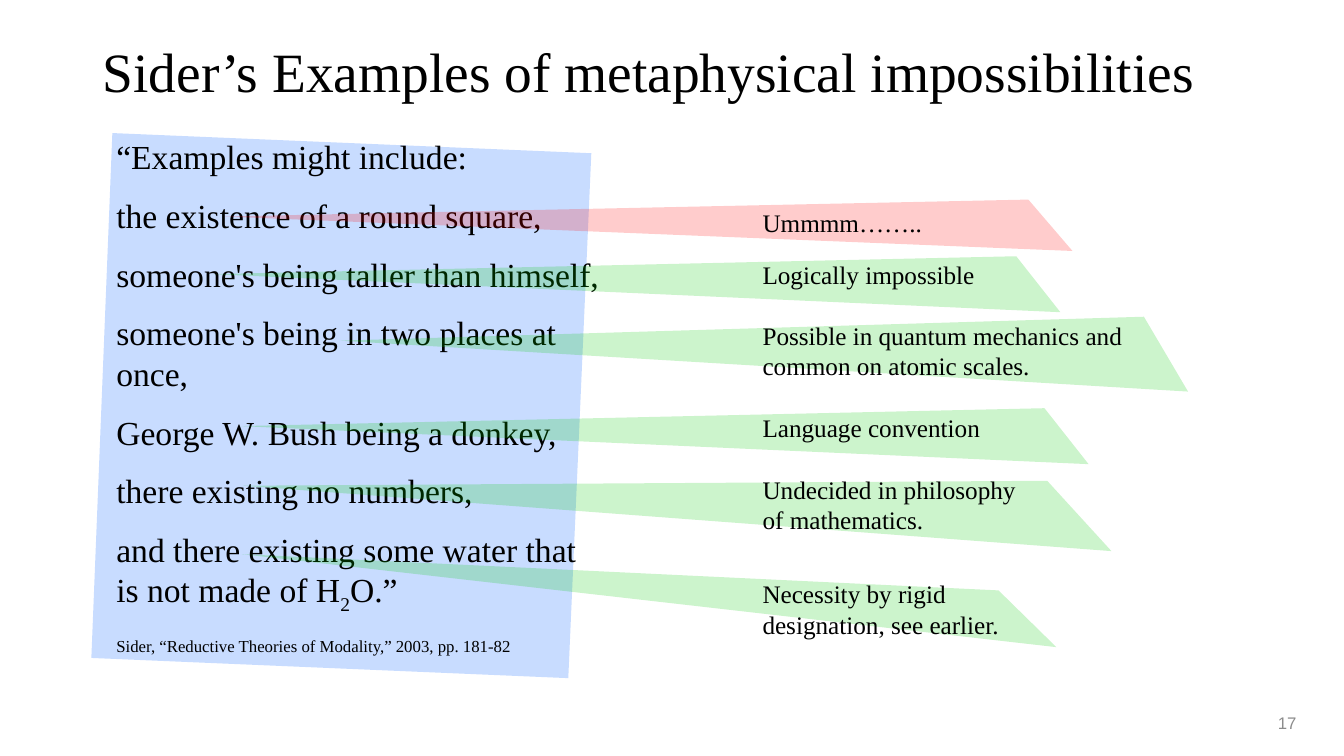
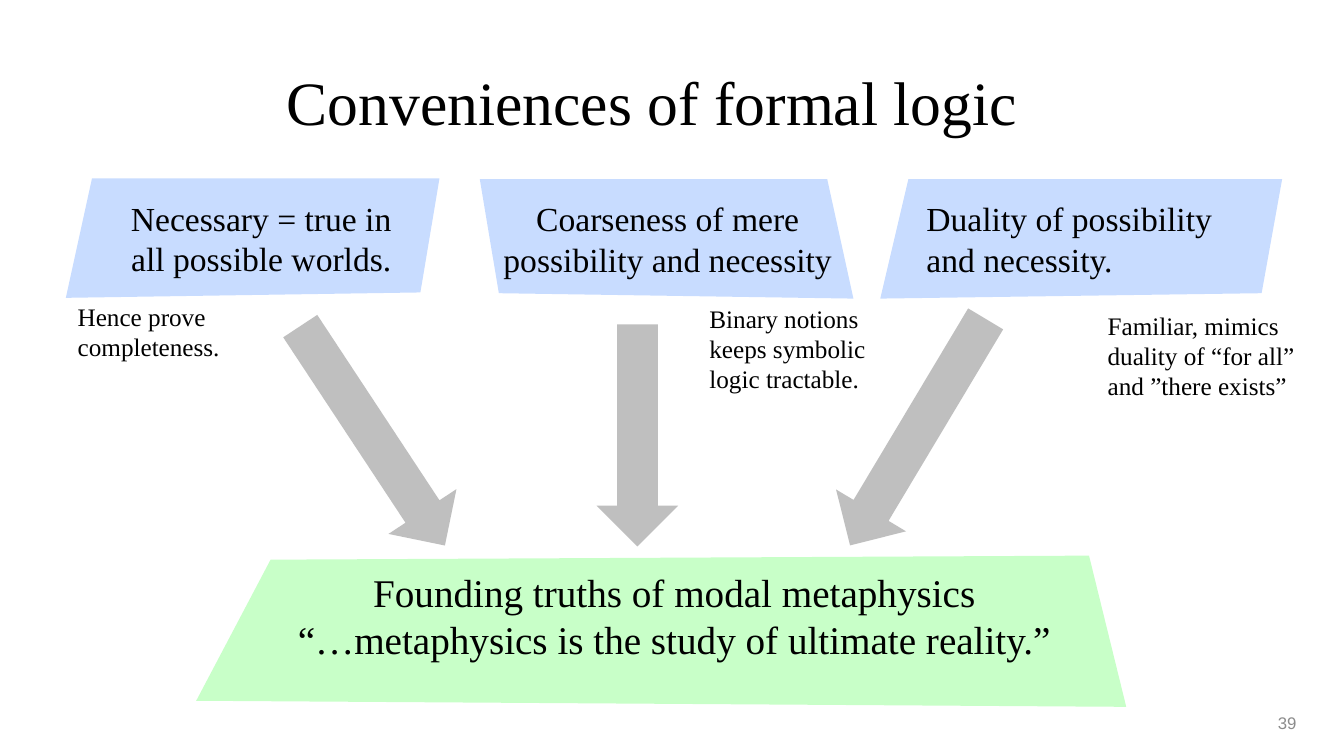
from dataclasses import dataclass

from lxml.etree import SubElement
from pptx import Presentation
from pptx.dml.color import RGBColor
from pptx.enum.shapes import MSO_SHAPE as Preset
from pptx.enum.text import MSO_ANCHOR as Anchor, PP_ALIGN as Align
from pptx.oxml.ns import qn
from pptx.util import Inches, Pt


@dataclass(frozen=True)
class Theme:
    serif: str = "Times New Roman"
    sans: str = "Arial"
    ink: str = "000000"
    muted: str = "8C8C8C"
    panel: str = "C8DCFF"
    base: str = "C8FFC8"
    arrow: str = "BFBFBF"
    objection: str = "00C800"
    doubt: str = "FF0000"
    wedge_opacity: int = 20
    heading: float = 44
    long_heading: float = 39.6
    conclusion: float = 28
    body: float = 24
    note: float = 18
    small: float = 12


THEME = Theme()


@dataclass(frozen=True)
class Box:
    left: float
    top: float
    width: float
    height: float

    def point(self, x, y):
        """Position at a percentage of this box."""
        return (round(self.left + self.width * x / 100),
                round(self.top + self.height * y / 100))

    def inner(self, x, y, width, height):
        """Inner box, all lengths in percent of this box."""
        return Box(*self.point(x, y), round(self.width * width / 100),
                   round(self.height * height / 100))

    def frame(self):
        return self.left, self.top, self.width, self.height


PAGE = Box(0, 0, Inches(40 / 3), Inches(7.5))


# Shared drawing helpers

def paint(shape, color, opacity=None):
    shape.shadow.inherit = False
    shape.fill.solid()
    shape.fill.fore_color.rgb = RGBColor.from_string(color)
    shape.line.fill.background()
    if opacity is not None:
        solid = shape._element.spPr.find(qn("a:solidFill"))
        SubElement(solid[0], qn("a:alpha")).set("val", str(opacity * 1000))


def add_outline(slide, box, corners, color, opacity=None):
    start, *rest = [box.point(x, y) for x, y in corners]
    builder = slide.shapes.build_freeform(*start)
    builder.add_line_segments(rest, close=True)
    paint(builder.convert_to_shape(), color, opacity)


def style_run(run, size, color=THEME.ink, font=THEME.serif):
    run.font.name = font
    run.font.size = Pt(size)
    run.font.color.rgb = RGBColor.from_string(color)


def add_text(slide, box, text, size, align=Align.LEFT, anchor=Anchor.TOP,
             color=THEME.ink, font=THEME.serif):
    frame = slide.shapes.add_textbox(*box.frame()).text_frame
    frame.word_wrap = True
    frame.vertical_anchor = anchor
    frame.text = text
    for paragraph in frame.paragraphs:
        paragraph.alignment = align
        for run in paragraph.runs:
            style_run(run, size, color, font)
    return frame


def add_page(deck, title, title_box, title_size, number):
    slide = deck.slides.add_slide(deck.slide_layouts[6])
    heading = add_text(slide, title_box, title, title_size, anchor=Anchor.MIDDLE)
    heading.paragraphs[0].line_spacing = 0.9
    add_text(slide, PAGE.inner(93.2, 92.9, 4, 5.3), number, THEME.small,
             Align.RIGHT, Anchor.MIDDLE, THEME.muted, THEME.sans)
    return slide


# Slide of examples and replies

EXAMPLES = [
    "“Examples might include:",
    "the existence of a round square,",
    "someone's being taller than himself,",
    "someone's being in two places at once,",
    "George W. Bush being a donkey,",
    "there existing no numbers,",
    "and there existing some water that is not made of H",
]
CITATION = "Sider, “Reductive Theories of Modality,” 2003, pp. 181-82"

# Reply, its top and width, wedge box, tip height, upper right corner, colour
REPLIES = [
    ("Possible in quantum mechanics and common on atomic scales.", 41.7, 32.4,
     (25.3, 41.9, 63.1, 9.9), 32, (94.8, 0), THEME.objection),
    ("Undecided in philosophy of mathematics.", 62.1, 20.6,
     (18.1, 63.6, 64.6, 9.3), 7, (92.6, 0), THEME.objection),
    ("Necessity by rigid designation, see earlier.", 75.9, 22.2,
     (18, 73.3, 60.6, 12.3), 0, (92.9, 39), THEME.objection),
    ("Language convention", 53.9, 20,
     (17.9, 54, 63.1, 7.4), 32, (94.8, 0), THEME.objection),
    ("Logically impossible", 33.7, 20,
     (15.8, 33.9, 63.1, 7.4), 32, (94.8, 0), THEME.objection),
    ("Ummmm……..", 26.8, 20,
     (16.7, 26.4, 63.1, 6.8), 33, (94.8, 0), THEME.doubt),
]
REPLY_COLUMN = 56


def add_quotation(slide, box):
    add_outline(slide, box, [(4.2, 0), (100, 3.7), (95.4, 100), (0, 96.3)],
                THEME.panel)
    frame = add_text(slide, box.inner(3, -0.4, 101.4, 97),
                     "\n".join(EXAMPLES + [CITATION]), THEME.body)
    *examples, citation = frame.paragraphs
    for paragraph in examples[1:]:
        paragraph.space_before = Pt(13.2)
    # Chemical formula with a lowered digit
    for text, baseline in (("2", "-25000"), ("O.”", "0")):
        run = examples[-1].add_run()
        run.text = text
        style_run(run, THEME.body)
        run._r.get_or_add_rPr().set("baseline", baseline)
    citation.space_before = Pt(14.4)
    style_run(citation.runs[0], THEME.small)


def add_reply(slide, page, text, top, width, wedge, tip, corner, color):
    add_outline(slide, page.inner(*wedge), [(0, tip), corner, (100, 100)],
                color, THEME.wedge_opacity)
    add_text(slide, page.inner(REPLY_COLUMN, top, width, 9.5), text, THEME.note)


def build_examples(deck):
    slide = add_page(deck, "Sider’s Examples of metaphysical impossibilities",
                     PAGE.inner(6.9, 5.3, 86.3, 9.2), THEME.long_heading, "17")
    add_quotation(slide, PAGE.inner(6.8, 17.6, 37.2, 72.1))
    for reply in REPLIES:
        add_reply(slide, PAGE, *reply)


# Slide of conveniences

@dataclass(frozen=True)
class Convenience:
    claim: str
    note: str
    card: tuple
    align: Align
    claim_span: tuple   # left, width
    note_span: tuple    # left, top, width
    arrow: tuple
    rotation: float = 0
    mirrored: bool = False


CONVENIENCES = [
    Convenience("Necessary = true in all possible worlds.",
                "Hence prove completeness.",
                (4.9, 23.6, 27.8, 15.8), Align.RIGHT, (11.1, 78.7),
                (0.5, 98.7, 45.6), (71.2, 105.5, 21.8, 220), 326.6),
    Convenience("Coarseness of mere possibility and necessity",
                "Binary notions keeps symbolic logic tractable.",
                (35.7, 23.7, 27.8, 15.8), Align.CENTER, (-5.1, 110.8),
                (58.8, 99.6, 58), (31.3, 121.5, 21.8, 186), mirrored=True),
    Convenience("Duality of possibility and necessity.",
                "Familiar, mimics duality of “for all” and ”there exists”",
                (65.5, 23.7, 29.9, 15.8), Align.LEFT, (9, 83.5),
                (54.1, 105.5, 61.2), (-0.8, 101.3, 20.3, 221), 30.9),
]
CARD_CORNERS = [(7, 0), (100, 0), (94.9, 95.5), (0, 100)]


def add_convenience(slide, box, item):
    corners = [(100 - x if item.mirrored else x, y) for x, y in CARD_CORNERS]
    add_outline(slide, box, corners, THEME.panel)
    left, width = item.claim_span
    add_text(slide, box.inner(left, 11.8, width, 77), item.claim, THEME.body,
             item.align)
    add_text(slide, box.inner(*item.note_span, 60), item.note, THEME.note)
    arrow = slide.shapes.add_shape(Preset.DOWN_ARROW,
                                   *box.inner(*item.arrow).frame())
    arrow.rotation = item.rotation
    paint(arrow, THEME.arrow)


def add_conclusion(slide, box):
    add_outline(slide, box, [(8, 2.7), (96, 0), (100, 100), (0, 96)], THEME.base)
    add_text(slide, box.inner(7.4, 5.3, 88, 69),
             "Founding truths of modal metaphysics\n"
             "“…metaphysics is the study of ultimate reality.”",
             THEME.conclusion, Align.CENTER)


def build_conveniences(deck):
    slide = add_page(deck, "Conveniences of formal logic",
                     PAGE.inner(20.6, 4.3, 66.3, 19.3), THEME.heading, "39")
    add_conclusion(slide, PAGE.inner(14.6, 73.5, 69.2, 20))
    for item in CONVENIENCES:
        add_convenience(slide, PAGE.inner(*item.card), item)


def main():
    deck = Presentation()
    deck.slide_width, deck.slide_height = PAGE.width, PAGE.height
    build_examples(deck)
    build_conveniences(deck)
    deck.save("out.pptx")


if __name__ == "__main__":
    main()
